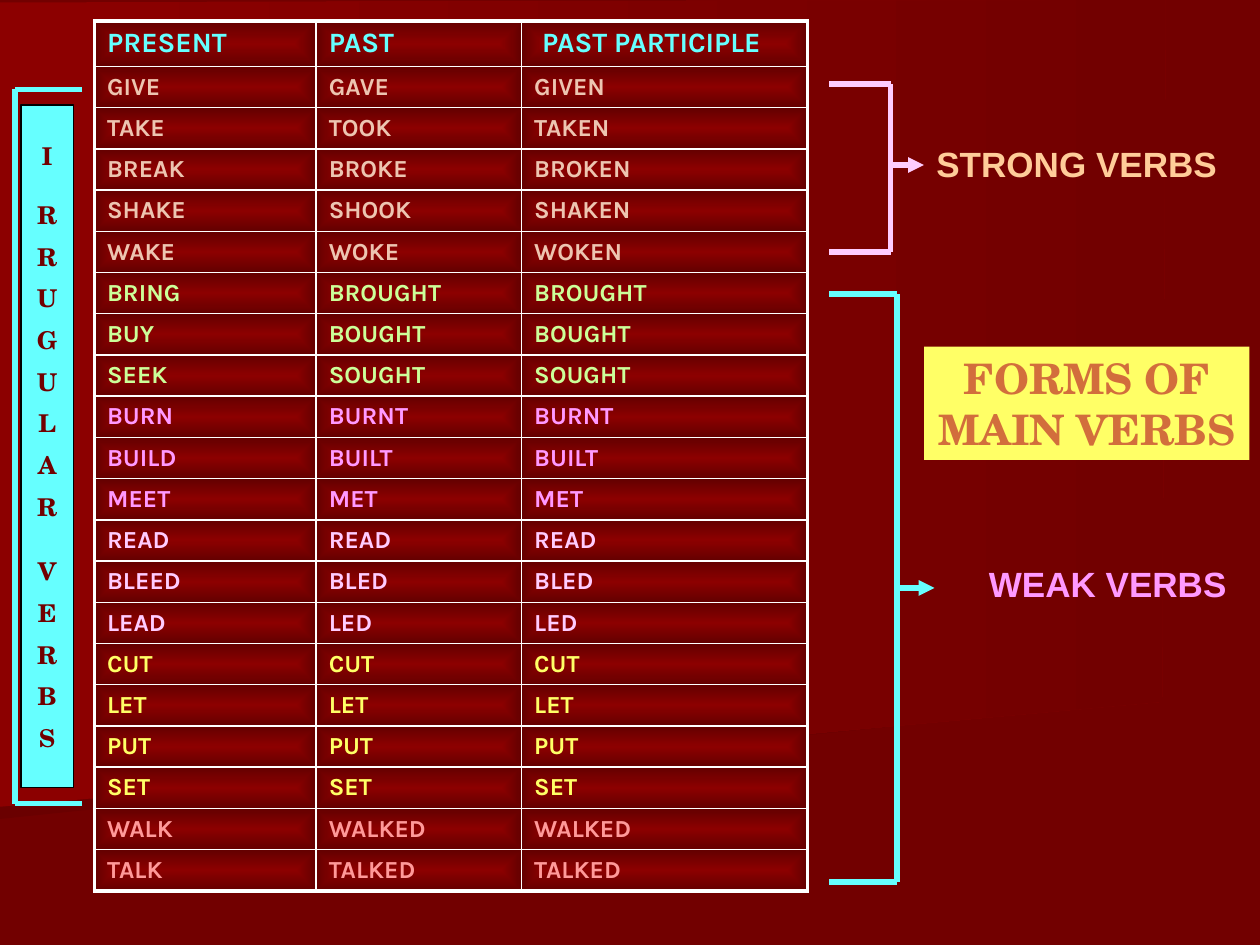
from dataclasses import dataclass

from lxml.etree import SubElement
from pptx import Presentation
from pptx.dml.color import RGBColor
from pptx.enum.shapes import MSO_CONNECTOR, MSO_SHAPE
from pptx.enum.text import MSO_ANCHOR, MSO_AUTO_SIZE, PP_ALIGN
from pptx.oxml import parse_xml
from pptx.oxml.ns import nsdecls, qn
from pptx.util import Pt


@dataclass(frozen=True)
class Theme:
    # Colours
    ground: str = "720000"
    glow: str = "8C0000"
    shade: str = "6A0000"
    cell_edge: str = "640000"
    rule: str = "FFFFFF"
    outline: str = "000000"
    cyan: str = "66FFFF"
    sand: str = "EDC5B1"
    lime: str = "CCFF99"
    pink: str = "FF99FF"
    pale_pink: str = "FFCCFF"
    yellow: str = "FFFF66"
    salmon: str = "FF9999"
    peach: str = "FFCC99"
    copper: str = "D26E3C"
    # Fonts and sizes
    table_font: str = "Karla"
    label_font: str = "Arial"
    serif_font: str = "TeX Gyre Schola"
    title_size: float = 24
    label_size: float = 20
    header_size: float = 16
    body_size: float = 14
    # Line widths
    thick: float = 3
    frame: float = 2.25
    thin: float = 1
    hairline: float = 0.75


THEME = Theme()

HEADER = ("PRESENT", "PAST", "PAST PARTICIPLE")
VERB_GROUPS = (
    (THEME.sand, ("GIVE GAVE GIVEN", "TAKE TOOK TAKEN", "BREAK BROKE BROKEN",
                  "SHAKE SHOOK SHAKEN", "WAKE WOKE WOKEN")),
    (THEME.lime, ("BRING BROUGHT BROUGHT", "BUY BOUGHT BOUGHT", "SEEK SOUGHT SOUGHT")),
    (THEME.pink, ("BURN BURNT BURNT", "BUILD BUILT BUILT", "MEET MET MET")),
    (THEME.pale_pink, ("READ READ READ", "BLEED BLED BLED", "LEAD LED LED")),
    (THEME.yellow, ("CUT CUT CUT", "LET LET LET", "PUT PUT PUT", "SET SET SET")),
    (THEME.salmon, ("WALK WALKED WALKED", "TALK TALKED TALKED")),
)


def rgb(colour):
    return RGBColor.from_string(colour)


class VerbSlide:
    def __init__(self, deck, theme):
        self.theme = theme
        self.page = deck.slides.add_slide(deck.slide_layouts[5])
        self.page.background.fill.solid()
        self.page.background.fill.fore_color.rgb = rgb(theme.ground)

    def set_frame(self, frame, anchor=MSO_ANCHOR.TOP, side=7.2, top=3.6):
        values = {"word_wrap": True, "auto_size": MSO_AUTO_SIZE.NONE,
                  "vertical_anchor": anchor, "margin_left": Pt(side),
                  "margin_right": Pt(side), "margin_top": Pt(top), "margin_bottom": Pt(3.6)}
        for name, value in values.items():
            setattr(frame, name, value)

    def add_text(self, para, text, font, size, colour, align=PP_ALIGN.LEFT, before=0):
        para.alignment = align
        para.space_before = Pt(before)
        span = para.add_run()
        span.text = text
        for name, value in {"name": font, "size": Pt(size), "bold": True}.items():
            setattr(span.font, name, value)
        span.font.color.rgb = rgb(colour)

    def title(self, text, left, top, width, height):
        box = self.page.shapes.title
        for name, value in zip(("left", "top", "width", "height"), (left, top, width, height)):
            setattr(box, name, Pt(value))
        box.fill.solid()
        box.fill.fore_color.rgb = rgb(self.theme.yellow)
        self.set_frame(box.text_frame, MSO_ANCHOR.MIDDLE, side=3.6)
        self.add_text(box.text_frame.paragraphs[0], text, self.theme.serif_font,
                      self.theme.title_size, self.theme.copper, PP_ALIGN.CENTER)
        # Bring the title in front of the backdrop
        box.element.getparent().append(box.element)

    def backdrop(self, points, start, end):
        corners = [(Pt(x), Pt(y)) for x, y in points]
        builder = self.page.shapes.build_freeform(*corners[0])
        builder.add_line_segments(corners[1:], close=True)
        shape = builder.convert_to_shape()
        shape.shadow.inherit = False
        shape.line.fill.background()
        shape.fill.gradient()
        shape.fill.gradient_angle = 0
        for stop, colour in zip(shape.fill.gradient_stops, (start, end)):
            stop.color.rgb = rgb(colour)

    def label(self, text, left, top, width, height, colour):
        box = self.page.shapes.add_textbox(Pt(left), Pt(top), Pt(width), Pt(height))
        self.set_frame(box.text_frame)
        self.add_text(box.text_frame.paragraphs[0], text, self.theme.label_font,
                      self.theme.label_size, colour)

    def line(self, x1, y1, x2, y2, colour, arrow=False):
        line = self.page.shapes.add_connector(
            MSO_CONNECTOR.STRAIGHT, Pt(x1), Pt(y1), Pt(x2), Pt(y2))
        line.line.width = Pt(self.theme.thick)
        line.line.color.rgb = rgb(colour)
        properties = line.element.spPr
        if arrow:
            SubElement(properties.find(qn("a:ln")), qn("a:tailEnd"), type="triangle")
        SubElement(properties, qn("a:effectLst"))

    def bracket(self, tips, spine, top, bottom, colour, arrow=None):
        self.line(tips, top, spine, top, colour)
        self.line(tips, bottom, spine, bottom, colour)
        self.line(spine, top, spine, bottom, colour)
        if arrow:
            end, middle = arrow
            self.line(spine, middle, end, middle, colour, arrow=True)

    def column_label(self, words, left, top, width, height, gaps):
        """Stack the letters of the words, with a wider gap before each word."""
        box = self.page.shapes.add_shape(
            MSO_SHAPE.RECTANGLE, Pt(left), Pt(top), Pt(width), Pt(height))
        box.shadow.inherit = False
        box.fill.solid()
        box.fill.fore_color.rgb = rgb(self.theme.cyan)
        box.line.color.rgb = rgb(self.theme.outline)
        box.line.width = Pt(self.theme.hairline)
        frame = box.text_frame
        self.set_frame(frame, side=0, top=20.6)
        for word, gap in zip(words, gaps):
            for place, letter in enumerate(word):
                first = not frame.paragraphs[0].runs
                para = frame.paragraphs[0] if first else frame.add_paragraph()
                self.add_text(para, letter, self.theme.serif_font, self.theme.body_size,
                              self.theme.ground, PP_ALIGN.CENTER, 7 if place else gap)

    def style_cell(self, cell, outer):
        """Rule the four sides, then fill with a glow from the centre."""
        properties = cell._tc.get_or_add_tcPr()
        for side in "LRTB":
            width = self.theme.frame if side in outer else self.theme.thin
            properties.append(parse_xml(
                f'<a:ln{side} {nsdecls("a")} w="{Pt(width)}"><a:solidFill>'
                f'<a:srgbClr val="{self.theme.rule}"/></a:solidFill></a:ln{side}>'))
        properties.append(parse_xml(
            f'<a:gradFill {nsdecls("a")} rotWithShape="1"><a:gsLst>'
            f'<a:gs pos="0"><a:srgbClr val="{self.theme.glow}"/></a:gs>'
            f'<a:gs pos="100000"><a:srgbClr val="{self.theme.cell_edge}"/></a:gs></a:gsLst>'
            '<a:path path="shape"><a:fillToRect l="50000" t="50000" r="50000" b="50000"/>'
            '</a:path></a:gradFill>'))

    def verb_table(self, left, top, widths, header_height, row_height):
        rows = [(HEADER, self.theme.header_size, self.theme.cyan)]
        rows += [(verb.split(), self.theme.body_size, colour)
                 for colour, verbs in VERB_GROUPS for verb in verbs]
        height = header_height + row_height * (len(rows) - 1)
        table = self.page.shapes.add_table(
            len(rows), len(widths), Pt(left), Pt(top), Pt(sum(widths)), Pt(height)).table
        table.first_row = table.horz_banding = False
        for column, width in zip(table.columns, widths):
            column.width = Pt(width)
        for r, (forms, size, colour) in enumerate(rows):
            table.rows[r].height = Pt(row_height if r else header_height)
            for c, form in enumerate(forms):
                cell = table.cell(r, c)
                self.add_text(cell.text_frame.paragraphs[0], form,
                              self.theme.table_font, size, colour)
                edges = {"L": c == 0, "R": c == len(widths) - 1,
                         "T": r == 0, "B": r == len(rows) - 1}
                self.style_cell(cell, [side for side, is_outer in edges.items() if is_outer])
        table.cell(0, len(widths) - 1).margin_left = Pt(11.7)


def main():
    deck = Presentation()
    deck.slide_width, deck.slide_height = Pt(720), Pt(540)
    slide = VerbSlide(deck, THEME)

    # Backdrop
    slide.backdrop([(644.4, 401), (0, 468), (0, 336), (644.4, 180)], THEME.shade, THEME.ground)
    slide.backdrop([(664, 401), (0, 461), (0, 1.4), (666, 0)], THEME.glow, THEME.ground)

    # Verb forms
    slide.verb_table(54, 12, (126.7, 117.4, 163.4), 25.9, 23.57)

    # Weak and strong verbs
    slide.bracket(474, 512.6, 168, 504, THEME.cyan, arrow=(534, 336))
    slide.label("WEAK VERBS", 558, 318, 156, 31, THEME.pink)
    slide.bracket(474, 509, 48, 144, THEME.pale_pink, arrow=(528, 94.3))
    slide.label("STRONG VERBS", 528, 78, 186, 31, THEME.peach)

    # Title
    slide.title("FORMS OF MAIN VERBS", 528, 198, 186, 64.8)

    # Irregular verbs
    slide.column_label(("I", "RRUGULAR", "VERBS"), 12, 60, 30, 390, gaps=(0, 16.8, 20.3))
    slide.bracket(47, 8.6, 51, 459.2, THEME.cyan)

    deck.save("out.pptx")


if __name__ == "__main__":
    main()
